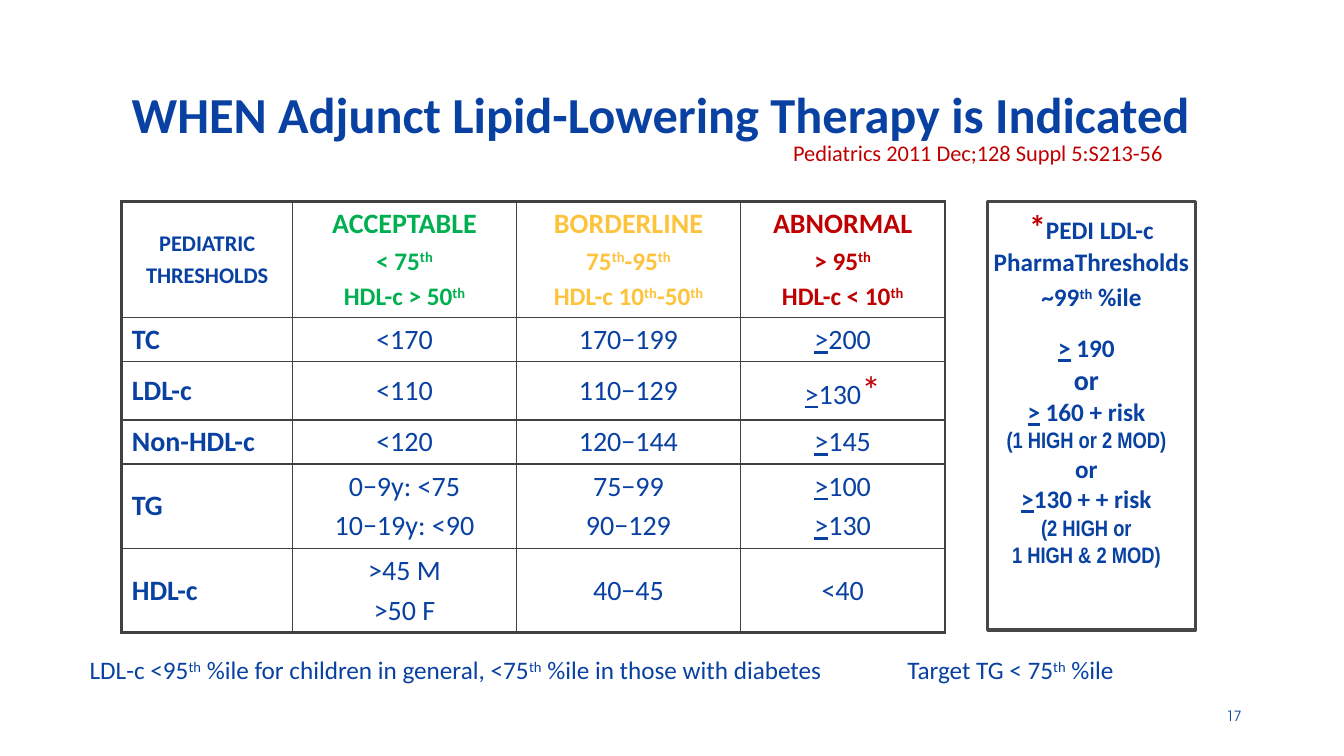
from dataclasses import dataclass

from lxml import etree
from pptx import Presentation
from pptx.dml.color import RGBColor
from pptx.enum.shapes import MSO_SHAPE
from pptx.enum.text import MSO_ANCHOR, PP_ALIGN
from pptx.oxml.ns import qn
from pptx.util import Pt

LEFT, MID, RIGHT = PP_ALIGN.LEFT, PP_ALIGN.CENTER, PP_ALIGN.RIGHT
TOP, CENTER = MSO_ANCHOR.TOP, MSO_ANCHOR.MIDDLE
RECT = MSO_SHAPE.RECTANGLE


class Theme:
    blue, page = "0841A2", "003DA6"
    green, amber, red = "00B050", "FDC33B", "C00000"
    grid, frame = "414142", "454847"
    body, narrow, number = "Calibri", "Arial Narrow", "TeX Gyre Adventor"
    title, star, mark, large, text, small, tiny = 36, 28, 24, 20, 18, 16, 10
    thick, thin = 2.25, 1


@dataclass
class Line:
    """Pieces are split by |; a leading ^ raises, _ underlines, * is a red star."""
    text: str
    size: float = Theme.text
    color: str = Theme.blue
    bold: bool = False
    font: str = Theme.body
    star: float = Theme.star


def write(frame, lines, align=LEFT, gap=0.0):
    """Fill a text frame; gap is the space between lines as a share of the size."""
    for i, line in enumerate(lines):
        para = frame.add_paragraph() if i else frame.paragraphs[0]
        para.alignment = align
        if i and gap:
            para.space_before = Pt(line.size * gap)
        for piece in line.text.split("|"):
            kind = piece[0] if piece[0] in "^_*" else ""
            run = para.add_run()
            run.text = piece[1:] if kind in ("^", "_") else piece
            font = run.font
            font.name, font.bold = line.font, line.bold
            font.size = Pt(line.star if kind == "*" else line.size)
            font.color.rgb = RGBColor.from_string(
                Theme.red if kind == "*" else line.color)
            if kind == "_":
                font.underline = True
            if kind == "^":
                run._r.get_or_add_rPr().set("baseline", "30000")


def label(slide, box, lines, align=LEFT, anchor=TOP, gap=0.0, wrap=True):
    frame = slide.shapes.add_textbox(*map(Pt, box)).text_frame
    frame.word_wrap, frame.vertical_anchor = wrap, anchor
    write(frame, lines, align, gap)
    return frame


def heading(slide, box):
    x, y, w, h = box
    title = Line("WHEN Adjunct Lipid-Lowering Therapy is Indicated",
                 Theme.title, bold=True)
    frame = label(slide, box, [title], anchor=CENTER)
    frame.paragraphs[0].line_spacing = 1.2
    cite = Line("Pediatrics 2011 Dec;128 Suppl 5:S213-56", Theme.small, Theme.red)
    label(slide, (x + 472.5, y + 71, 285, 27), [cite], wrap=False)


def border(cell, widths):
    """Draw the left, right, top and bottom edges of a cell."""
    props = cell._tc.get_or_add_tcPr()
    for side, width in zip("LRTB", widths):
        edge = etree.SubElement(props, qn(f"a:ln{side}"), w=str(Pt(width)))
        fill = etree.SubElement(edge, qn("a:solidFill"))
        etree.SubElement(fill, qn("a:srgbClr"), val=Theme.grid)


def head(color, name, *limits):
    return [Line(name, Theme.large, color, True),
            *(Line(limit, Theme.text, color, True) for limit in limits)]


def grid(slide, spot):
    cols, rows = (122, 160, 160, 146), (83, 31.5, 41.5, 31.5, 60.5, 60)
    top = [
        [Line(word, Theme.small, bold=True) for word in ("PEDIATRIC", "THRESHOLDS")],
        head(Theme.green, "ACCEPTABLE", "< 75|^th", "HDL-c > 50|^th"),
        head(Theme.amber, "BORDERLINE", "75|^th|-95|^th", "HDL-c 10|^th|-50|^th"),
        head(Theme.red, "ABNORMAL", "> 95|^th", "HDL-c < 10|^th"),
    ]
    values = [
        ("TC", "<170", "170−199", "_>|200"),
        ("LDL-c", "<110", "110−129", "_>|130|*"),
        ("Non-HDL-c", "<120", "120−144", "_>|145"),
        ("TG", "0−9y: <75\n10−19y: <90", "75−99\n90−129", "_>|100\n_>|130"),
        ("HDL-c", ">45 M\n>50 F", "40−45", "<40"),
    ]
    body = [[[Line(part, Theme.large, bold=c == 0) for part in value.split("\n")]
             for c, value in enumerate(row)] for row in values]
    size = (sum(cols), sum(rows))
    table = slide.shapes.add_table(len(rows), len(cols), *map(Pt, spot + size)).table
    table.first_row = table.horz_banding = False
    for col, width in zip(table.columns, cols):
        col.width = Pt(width)
    for r, row in enumerate([top] + body):
        table.rows[r].height = Pt(rows[r])
        for c, lines in enumerate(row):
            cell = table.cell(r, c)
            cell.vertical_anchor = CENTER
            write(cell.text_frame, lines, LEFT if r and not c else MID, 0.2)
            outer = (c == 0, c == len(cols) - 1, r == 0, r == len(rows) - 1)
            border(cell, [Theme.thick if end else Theme.thin for end in outer])
            cell.fill.background()


def panel(slide, box):
    x, y, w, h = box
    frame = slide.shapes.add_shape(RECT, *map(Pt, box))
    frame.shadow.inherit = False
    frame.fill.background()
    frame.line.color.rgb = RGBColor.from_string(Theme.frame)
    frame.line.width = Pt(Theme.thick)
    intro = [Line(text, bold=True, star=Theme.mark)
             for text in ("*|PEDI LDL-c PharmaThresholds", "~99|^th| %ile")]
    label(slide, (x - 3.6, y - 0.5, 155.5, 109), intro, MID, gap=0.2)
    rules = [
        Line("_>| 190", bold=True),
        Line("or", Theme.large, bold=True),
        Line("_>| 160 + risk", bold=True),
        Line("(1 HIGH or 2 MOD)", Theme.small, bold=True, font=Theme.narrow),
        Line("or", bold=True),
        Line("_>|130 + + risk", bold=True),
        Line("(2 HIGH or", Theme.small, bold=True, font=Theme.narrow),
        Line("1 HIGH & 2 MOD)", Theme.small, bold=True, font=Theme.narrow),
    ]
    label(slide, (x - 7.2, y + 90, 155.5, 205), rules, MID)


def notes(slide, box):
    x, y, w, h = box
    goal = "LDL-c <95|^th| %ile for children in general, <75|^th| %ile in those with diabetes"
    label(slide, (x, y, 545, h), [Line(goal)], wrap=False)
    label(slide, (x + 584, y, w - 584, h), [Line("Target TG < 75|^th| %ile")],
          wrap=False)


def footer(slide, box):
    page = Line("17", Theme.tiny, Theme.page, font=Theme.number)
    label(slide, box, [page], RIGHT, CENTER)


def main():
    deck = Presentation()
    deck.slide_width, deck.slide_height = Pt(960), Pt(540)
    slide = deck.slides.add_slide(deck.slide_layouts[6])
    footer(slide, (678, 497, 216, 29))
    heading(slide, (87, 24.5, 828, 104.5))
    grid(slide, (87, 144))
    panel(slide, (705.5, 144, 148.5, 306))
    notes(slide, (57, 464, 756, 29))
    deck.save("out.pptx")


if __name__ == "__main__":
    main()
